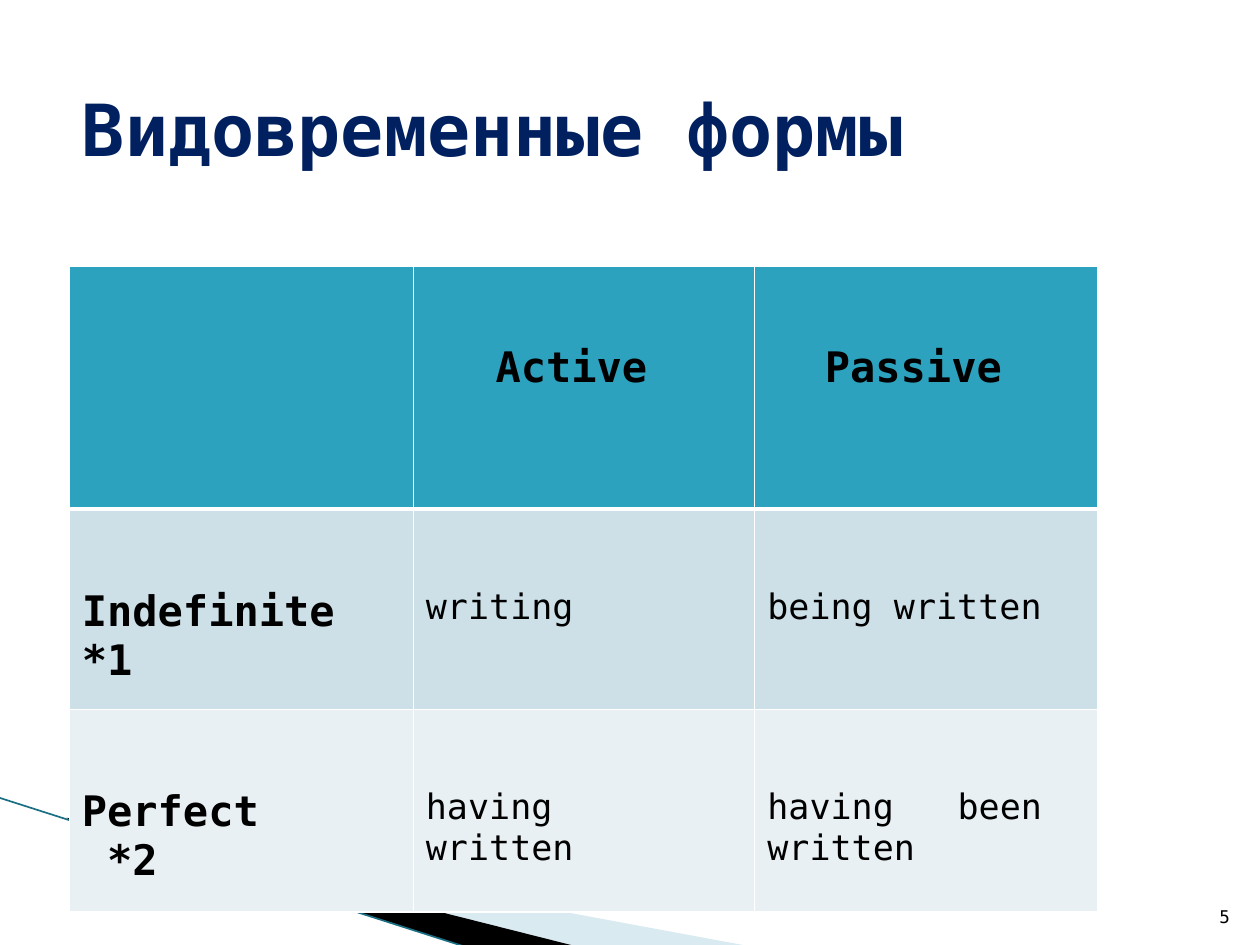
from lxml import etree
from pptx import Presentation
from pptx.dml.color import RGBColor
from pptx.enum.shapes import MSO_CONNECTOR as Connector
from pptx.enum.text import MSO_ANCHOR as Anchor, PP_ALIGN as Align
from pptx.oxml.ns import qn
from pptx.util import Inches, Pt

FONT = "DejaVu Sans Mono"
COLORS = {
    "title": "002060", "text": "000000", "border": "FFFFFF",
    "header": "2DA2BF", "band1": "CDE0E8", "band2": "E8F0F4",
    "pale": "A0CBDC", "dark": "000000", "edge": "1B6F83",
}
ROWS = [
    ["", "Active ", "Passive "],
    ["Indefinite *1", "writing", "being written"],
    ["Perfect\v *2", "having\vwritten", "having\tbeen written"],
]
ROW_FILLS = ["header", "band1", "band2"]
COL_WIDTHS = [2.73, 2.71, 2.72]
ROW_HEIGHTS = [1.93, 1.59, 1.61]


def rgb(name):
    return RGBColor.from_string(COLORS[name])


def add_run(p, text, size, color="text", bold=False):
    r = p.add_run()
    r.text = text
    r.font.name, r.font.size, r.font.bold = FONT, Pt(size), bold
    r.font.color.rgb = rgb(color)


def add_text(p, text, size, bold=False):
    """Add runs to a paragraph, with a line break at each vertical tab."""
    for i, line in enumerate(text.split("\v")):
        if i:
            p.add_line_break()
        add_run(p, line, size, bold=bold)


def add_wedge(slide, points, color, alpha=None):
    start, *rest = [(Inches(x), Inches(y)) for x, y in points]
    builder = slide.shapes.build_freeform(*start)
    builder.add_line_segments(rest, close=True)
    sp = builder.convert_to_shape()
    sp.shadow.inherit = False
    sp.fill.solid()
    sp.fill.fore_color.rgb = rgb(color)
    sp.line.fill.background()
    if alpha:
        clr = sp._element.spPr.find(".//" + qn("a:srgbClr"))
        etree.SubElement(clr, qn("a:alpha")).set("val", str(alpha * 1000))


def add_line(slide, x1, y1, x2, y2, color, width):
    line = slide.shapes.add_connector(
        Connector.STRAIGHT, Inches(x1), Inches(y1), Inches(x2), Inches(y2))
    line.line.color.rgb = rgb(color)
    line.line.width = Pt(width)
    etree.SubElement(line._element.spPr, qn("a:effectLst"))


def set_borders(cell, bottom):
    tcPr = cell._tc.get_or_add_tcPr()
    widths = {"a:lnL": 1, "a:lnR": 1, "a:lnT": 1, "a:lnB": bottom}
    for i, (tag, width) in enumerate(widths.items()):
        ln = etree.Element(qn(tag), w=str(Pt(width)))
        fill = etree.SubElement(ln, qn("a:solidFill"))
        etree.SubElement(fill, qn("a:srgbClr")).set("val", COLORS["border"])
        tcPr.insert(i, ln)


def add_tab_stop(p, position):
    tabs = etree.SubElement(p._p.get_or_add_pPr(), qn("a:tabLst"))
    etree.SubElement(tabs, qn("a:tab"), pos=str(Inches(position)), algn="l")


def add_forms_table(slide):
    table = slide.shapes.add_table(
        len(ROWS), len(COL_WIDTHS), Inches(0.55), Inches(2.11),
        Inches(sum(COL_WIDTHS)), Inches(sum(ROW_HEIGHTS))).table
    for col, width in zip(table.columns, COL_WIDTHS):
        col.width = Inches(width)
    for i, texts in enumerate(ROWS):
        table.rows[i].height = Inches(ROW_HEIGHTS[i])
        for j, text in enumerate(texts):
            cell = table.cell(i, j)
            cell.fill.solid()
            cell.fill.fore_color.rgb = rgb(ROW_FILLS[i])
            set_borders(cell, bottom=3 if i == 0 else 1)
            cell.margin_top = Inches(0.62)
            p = cell.text_frame.paragraphs[0]
            p.alignment = Align.CENTER if i == 0 else Align.LEFT
            if "\t" in text:
                add_tab_stop(p, 1.51)
            heading = i == 0 or j == 0
            if text:
                add_text(p, text, 24 if heading else 20, bold=heading)


def set_title(slide, text):
    title = slide.shapes.title
    title.left, title.top = Inches(0.55), Inches(0.39)
    title.width, title.height = Inches(8.17), Inches(1.25)
    tf = title.text_frame
    tf.vertical_anchor = Anchor.MIDDLE
    p = tf.paragraphs[0]
    p.alignment = Align.LEFT
    add_run(p, text, 41, "title", bold=True)


def add_page_number(slide, number):
    box = slide.shapes.add_textbox(
        Inches(9.46), Inches(7.01), Inches(0.4), Inches(0.4))
    tf = box.text_frame
    tf.word_wrap = True
    tf.vertical_anchor = Anchor.BOTTOM
    p = tf.paragraphs[0]
    p.alignment = Align.RIGHT
    add_run(p, number, 10)


def main():
    prs = Presentation()
    prs.slide_width, prs.slide_height = Inches(10), Inches(7.5)
    slide = prs.slides.add_slide(prs.slide_layouts[5])

    # Corner decoration
    add_wedge(slide, [(0.55, 6.51), (5.95, 7.51), (4.56, 7.51), (0.55, 6.5)],
              "pale", alpha=40)
    add_wedge(slide, [(0.53, 6.49), (4.57, 7.51), (3.72, 7.52), (0.54, 6.5)],
              "dark")
    add_line(slide, -0.01, 6.33, 3.71, 7.52, "edge", 0.95)

    # Content
    set_title(slide, "Видовременные формы")
    add_forms_table(slide)
    add_page_number(slide, "5")

    prs.save("out.pptx")


if __name__ == "__main__":
    main()
